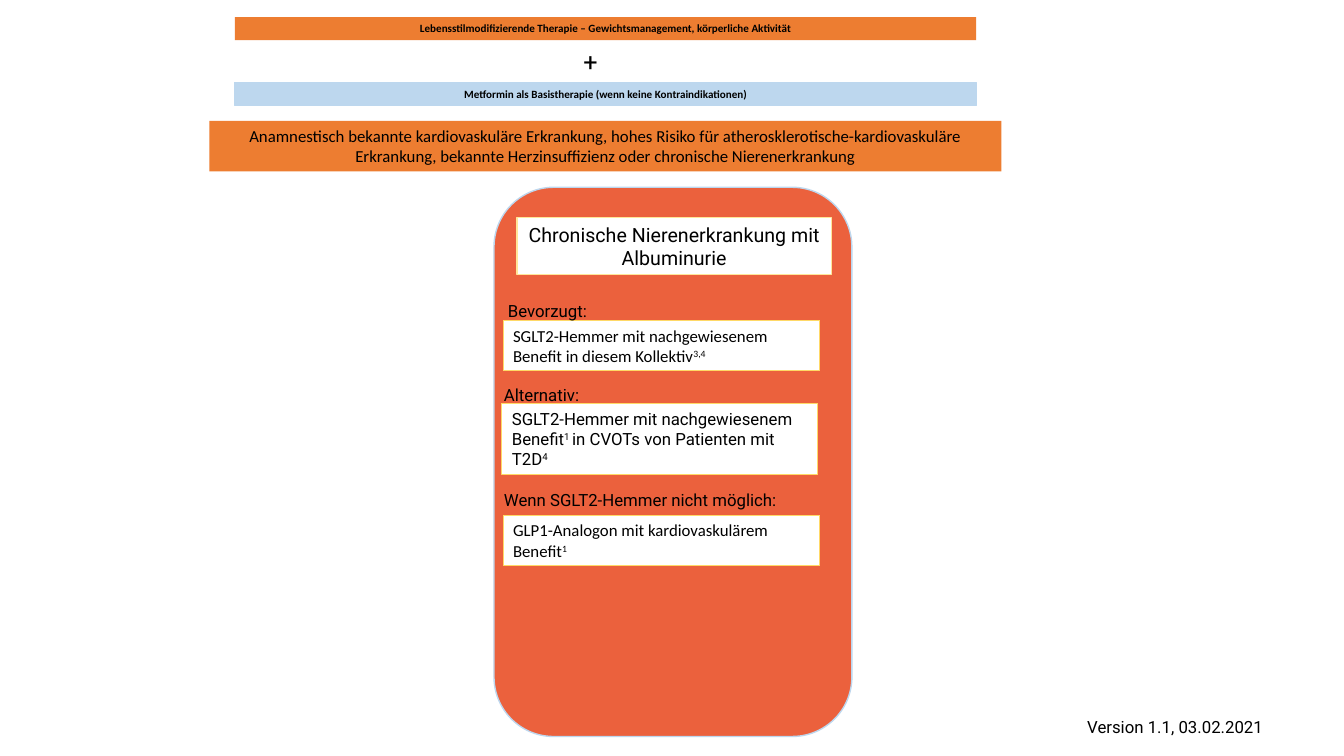
from pptx import Presentation
from pptx.dml.color import RGBColor as Rgb
from pptx.enum.shapes import MSO_SHAPE as Geo
from pptx.enum.text import MSO_ANCHOR as Anchor, MSO_AUTO_SIZE as Auto, PP_ALIGN as Align
from pptx.util import Cm, Pt

BLACK = Rgb(0x00, 0x00, 0x00)
WHITE = Rgb(0xFF, 0xFF, 0xFF)
ORANGE = Rgb(0xED, 0x7D, 0x31)
BLUE = Rgb(0xBD, 0xD7, 0xEE)
RED = Rgb(0xEB, 0x61, 0x3D)
CREAM = Rgb(0xFF, 0xE6, 0x99)
GOLD = Rgb(0xFF, 0xD9, 0x66)

BAR = dict(name="Calibri", size=Pt(7.9), bold=True)
BODY = dict(name="Calibri", size=Pt(12))
ROBOTO = dict(name="Roboto", size=Pt(12))
HEAD = dict(name="Roboto", size=Pt(14))
PLUS = dict(name="Roboto", size=Pt(18))


def write(shape, parts, style, align=Align.LEFT, anchor=Anchor.TOP, wrap=True):
    frame = shape.text_frame
    layout = dict(word_wrap=wrap, auto_size=Auto.SHAPE_TO_FIT_TEXT, vertical_anchor=anchor)
    for key, value in layout.items():
        setattr(frame, key, value)
    para = frame.paragraphs[0]
    para.alignment = align
    for index, part in enumerate(parts):
        run = para.add_run()
        run.text = part
        run.font.color.rgb = BLACK
        for key, value in style.items():
            setattr(run.font, key, value)
        if index % 2:
            run.font._rPr.set("baseline", "30000")


def block(slide, box, fill, line=None, width=0.75, kind=Geo.RECTANGLE):
    shape = slide.shapes.add_shape(kind, *map(Cm, box))
    shape.shadow.inherit = False
    shape.fill.solid()
    shape.fill.fore_color.rgb = fill
    if line is None:
        shape.line.fill.background()
    else:
        shape.line.color.rgb = line
        shape.line.width = Pt(width)
    return shape


def label(slide, box, text, style, wrap=True):
    write(slide.shapes.add_textbox(*map(Cm, box)), [text], style, wrap=wrap)


def header(slide, left, top, width):
    inset = 0.64
    bars = [
        (0, inset, 0.58, ORANGE, None, BAR,
         "Lebensstilmodifizierende Therapie – Gewichtsmanagement, körperliche Aktivität"),
        (1.65, inset, 0.58, BLUE, BLUE, BAR,
         "Metformin als Basistherapie (wenn keine Kontraindikationen)"),
        (2.62, 0, 1.27, ORANGE, None, BODY,
         "Anamnestisch bekannte kardiovaskuläre Erkrankung, hohes Risiko für "
         "atherosklerotische-kardiovaskuläre Erkrankung, bekannte Herzinsuffizienz "
         "oder chronische Nierenerkrankung"),
    ]
    for down, side, high, fill, line, style, text in bars:
        bar = block(slide, (left + side, top + down, width - 2 * side, high), fill, line)
        write(bar, [text], style, Align.CENTER, Anchor.MIDDLE)
    label(slide, (left + 9.17, top + 0.61, 0.84, 1.02), "+", PLUS, False)


def panel(slide, left, top, width, height):
    block(slide, (left, top, width, height), RED, BLUE, 1, Geo.ROUNDED_RECTANGLE)
    title = block(slide, (left + 0.58, top + 0.76, 7.92, 1.45), WHITE, CREAM)
    write(title, ["Chronische Nierenerkrankung mit Albuminurie"], HEAD,
          Align.CENTER, Anchor.MIDDLE)
    steps = [
        ("Bevorzugt:", 0.1, 2.74, 3.02, (0.23, 3.35, 7.98, 1.27), BODY,
         ["SGLT2-Hemmer mit nachgewiesenem Benefit in diesem Kollektiv", "3,4"]),
        ("Alternativ:", 0, 4.85, 2.95, (0.2, 5.44, 7.95, 1.8), ROBOTO,
         ["SGLT2-Hemmer mit nachgewiesenem Benefit", "1 ",
          "in CVOTs von Patienten mit T2D", "4"]),
        ("Wenn SGLT2-Hemmer nicht möglich:", 0, 7.49, 8.51, (0.23, 8.26, 7.98, 1.27), BODY,
         ["GLP1-Analogon mit kardiovaskulärem Benefit", "1"]),
    ]
    for name, side, down, wide, (x, y, w, h), style, parts in steps:
        card = block(slide, (left + x, top + y, w, h), WHITE, GOLD)
        write(card, parts, style, anchor=Anchor.MIDDLE)
        label(slide, (left + side, top + down, wide, 0.76), name, ROBOTO)


def footer(slide, left, top, width, height):
    label(slide, (left, top, width, height), "Version 1.1, 03.02.2021", ROBOTO, False)


def main():
    deck = Presentation()
    deck.slide_width, deck.slide_height = Cm(33.87), Cm(19.05)
    slide = deck.slides.add_slide(deck.slide_layouts[6])
    header(slide, 5.28, 0.43, 19.96)
    panel(slide, 12.45, 4.72, 9.02, 13.84)
    footer(slide, 27.15, 17.93, 5, 0.76)
    deck.save("out.pptx")


if __name__ == "__main__":
    main()
